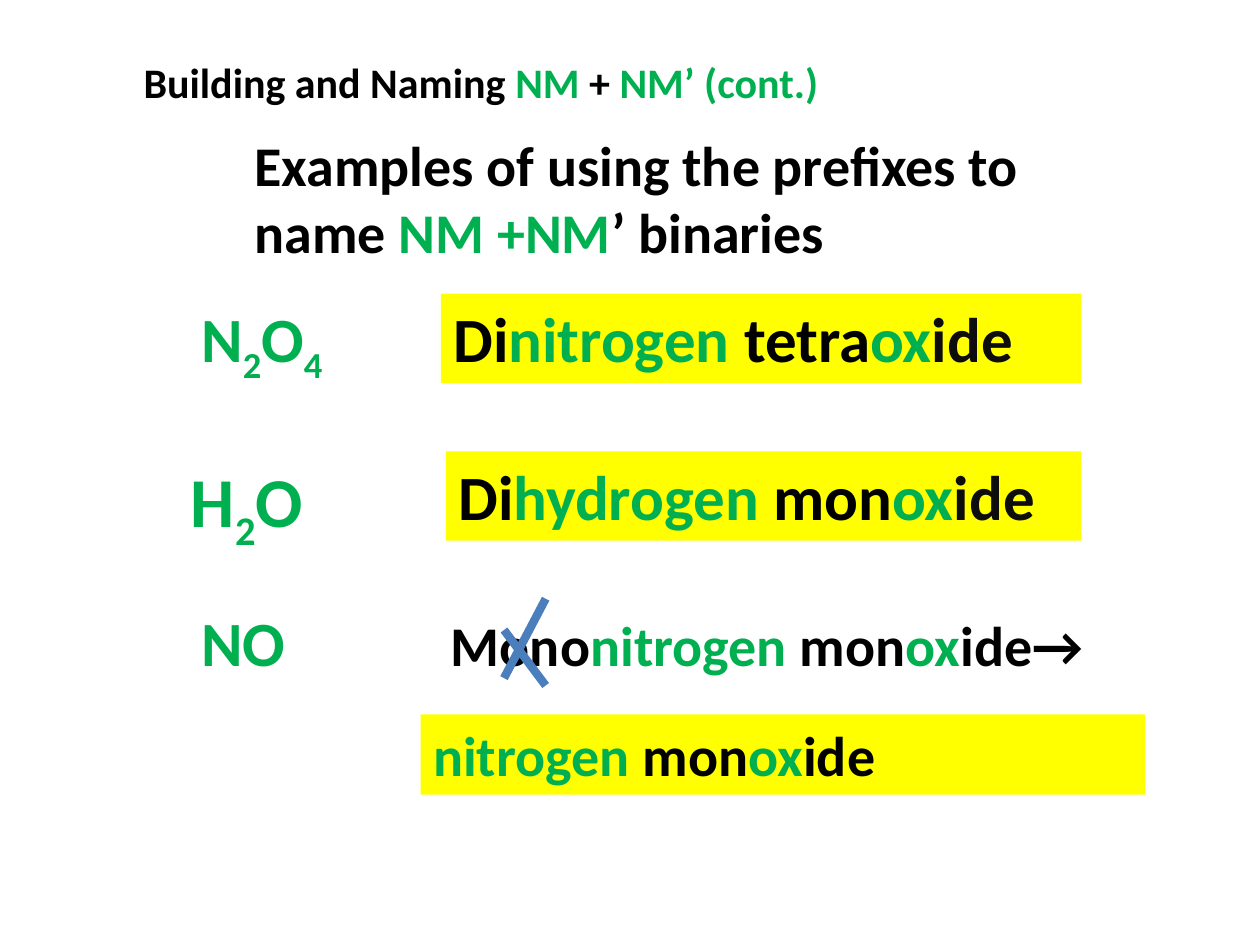
from lxml import etree
from pptx import Presentation
from pptx.dml.color import RGBColor
from pptx.enum import shapes, text
from pptx.oxml import ns
from pptx.util import Cm, Pt

BLACK, DARK, GREEN = "000000", "0D0D0D", "00B050"
YELLOW, BLUE = "FFFF00", "4B7EBC"


def color(code):
    return RGBColor.from_string(code)


class Page:
    """Holds the text style and the slide being filled."""

    font = "Calibri"

    def __init__(self, slide):
        self.slide = slide

    def words(self, shape, parts, size):
        """Fill a shape with (words, colour[, size]) parts; colour None is a green subscript."""
        frame = shape.text_frame
        frame.word_wrap = True
        frame.auto_size = text.MSO_AUTO_SIZE.SHAPE_TO_FIT_TEXT
        frame.vertical_anchor = text.MSO_ANCHOR.TOP
        para = frame.paragraphs[0]
        para.alignment = text.PP_ALIGN.LEFT
        for part, code, *own in parts:
            run = para.add_run()
            run.text = part
            font = run.font
            font.name, font.bold = self.font, True
            font.size = Pt(own[0] if own else size)
            font.color.rgb = color(code or GREEN)
            if code is None:
                run._r.get_or_add_rPr().set("baseline", "-25000")

    def label(self, box, parts, size):
        shape = self.slide.shapes.add_textbox(*map(Cm, box))
        self.words(shape, parts, size)

    def panel(self, box, parts, size):
        """Add text on a yellow highlight."""
        shape = self.slide.shapes.add_shape(
            shapes.MSO_SHAPE.RECTANGLE, *map(Cm, box))
        shape.shadow.inherit = False
        shape.fill.solid()
        shape.fill.fore_color.rgb = color(YELLOW)
        shape.line.fill.background()
        self.words(shape, parts, size)

    def stroke(self, ends):
        line = self.slide.shapes.add_connector(
            shapes.MSO_CONNECTOR.STRAIGHT, *map(Cm, ends))
        line.line.color.rgb = color(BLUE)
        line.line.width = Pt(4.75)
        etree.SubElement(line._element.spPr, ns.qn("a:effectLst"))


def main():
    deck = Presentation()
    deck.slide_width, deck.slide_height = Cm(25.4), Cm(19.05)
    page = Page(deck.slides.add_slide(deck.slide_layouts[6]))

    page.label((4.88, 2.51, 18.62, 2.99), [
        ("Examples of using the prefixes to name ", BLACK),
        ("NM +NM", GREEN), ("’ binaries", BLACK)], 32)
    page.label((2.39, 0.74, 22.23, 1.62), [
        (" ", BLACK, 32), ("Building and Naming ", BLACK), ("NM ", GREEN),
        ("+ ", BLACK), ("NM’ (cont.)", GREEN)], 24)

    page.label((3.81, 5.92, 5.92, 1.8), [
        ("N", GREEN), ("2", None), ("O", GREEN), ("4", None)], 36)
    page.panel((8.89, 5.92, 12.9, 1.8), [
        ("Di", BLACK), ("nitrogen ", GREEN), ("tetra", BLACK),
        ("ox", GREEN), ("ide", DARK)], 36)

    page.label((3.6, 9.1, 4.02, 1.96), [
        ("H", GREEN), ("2", None), ("O", GREEN)], 40)
    page.panel((8.99, 9.1, 12.8, 1.8), [
        ("Di", BLACK), ("hydrogen ", GREEN), ("mon", BLACK),
        ("ox", GREEN), ("ide", DARK)], 36)

    page.label((3.81, 12.04, 4.66, 1.8), [("NO", GREEN)], 36)
    name = [("nitrogen", GREEN), (" mon", BLACK), ("ox", GREEN)]
    page.label((8.84, 12.19, 14.6, 1.62),
               [("Mono", BLACK), *name, ("ide→", BLACK)], 32)
    for ends in ((11, 12.07, 10.16, 13.67), (11, 13.82, 10.16, 12.7)):
        page.stroke(ends)
    page.panel((8.48, 14.4, 14.6, 1.62), [*name, ("ide", BLACK)], 32)

    deck.save("out.pptx")


if __name__ == "__main__":
    main()
